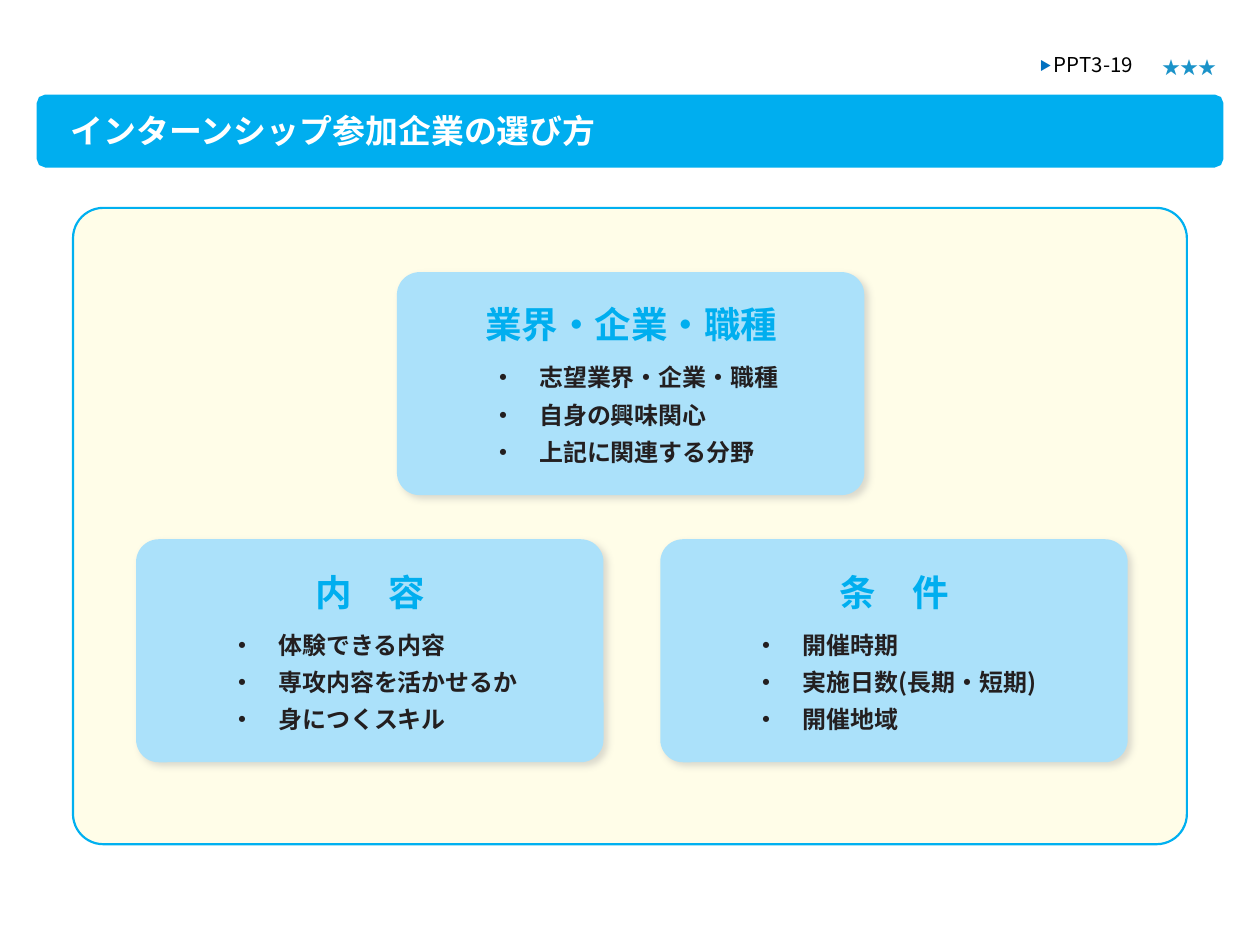
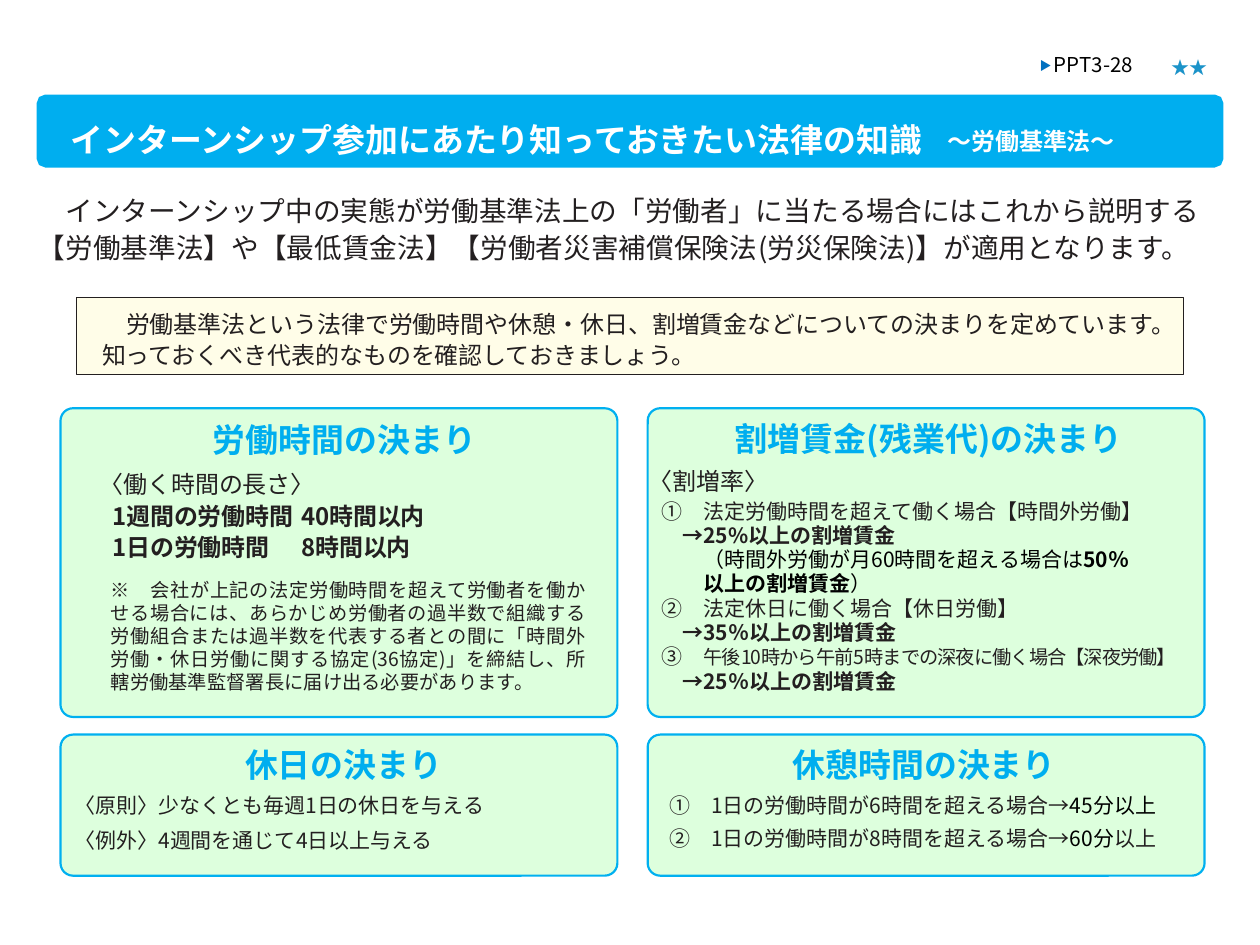
from dataclasses import dataclass, field, replace

from lxml import etree
from pptx import Presentation
from pptx import util as u
from pptx.dml.color import RGBColor
from pptx.enum import shapes, text
from pptx.oxml import ns

CENTER = text.PP_ALIGN.CENTER
JUSTIFY = text.PP_ALIGN.JUSTIFY


@dataclass(frozen=True)
class Style:
    size: float
    color: str
    bold: bool = False
    baseline: int = 0
    spacing: int = 0


@dataclass(frozen=True)
class Theme:
    font: str = "Noto Sans CJK JP"
    band: str = "00AEEF"
    outline: str = "00B0F0"
    cream: str = "FFFDE8"
    sky: str = "ABE1FA"
    mint: str = "DDFFDD"
    ink: str = "231F20"
    shadow: str = "A6A6A6"
    title: Style = Style(18.8, "FFFFFF", True)
    subtitle: Style = Style(23.7, "FFFFFF", True, baseline=5000)
    marker: Style = Style(11.7, "0070C0", baseline=9000)
    number: Style = Style(11.7, "000000")
    stars: Style = Style(10.3, "1B93C9")
    card_heading: Style = Style(20.9, "00AEEF", True)
    heading: Style = Style(18.8, "00AEEF", True)
    lead: Style = Style(15.8, "231F20")
    body: Style = Style(13.7, "231F20")
    strong: Style = Style(13.7, "231F20", True)
    detail: Style = Style(12, "231F20")
    remark: Style = Style(11, "231F20")


THEME = Theme()


@dataclass
class Line:
    """One paragraph: runs are (text, style) pairs, lengths in inches, spacing in points."""
    runs: list
    left: float = 0
    first: float = 0
    before: float = 0
    spacing: float = None
    align: int = None
    tabs: list = field(default_factory=list)


class Deck:
    def __init__(self, theme):
        self.theme = theme
        self.presentation = Presentation()
        self.presentation.slide_width = u.Inches(10)
        self.presentation.slide_height = u.Inches(7.5)
        self.slide = None

    def add_slide(self, number, stars, title_runs):
        """Start a slide with the shared band, title, number and star rating."""
        self.slide = self.presentation.slides.add_slide(self.presentation.slide_layouts[6])
        self.band(0.29, 0.75, 9.42, 0.58)
        self.text(0.55, 0.86, 9.17, 0.33, [Line(title_runs, left=0.01, before=1.1)], top=0.02)
        self.text(8.24, 0.4, 0.99, 0.21,
                  [Line([("▶ ", self.theme.marker), (number, self.theme.number)],
                        left=0.01, before=1)], top=0.01)
        self.text(9.23, 0.4, 0.43, 0.27,
                  [Line([("★" * stars, self.theme.stars)], align=CENTER)],
                  top=0.05, wrap=False)

    def paint(self, shape, fill, line=None, width=1.25):
        shape.shadow.inherit = False
        shape.fill.solid()
        shape.fill.fore_color.rgb = RGBColor.from_string(fill)
        if line:
            shape.line.color.rgb = RGBColor.from_string(line)
            shape.line.width = u.Pt(width)
        else:
            shape.line.fill.background()
        return shape

    def band(self, left, top, width, height):
        corner = [(0.16, 0), (0.07, 0), (0.02, 0.02), (0, 0.07), (0, 0.16)]
        left_side = corner + [(x, height - y) for x, y in reversed(corner)]
        outline = left_side + [(width - x, y) for x, y in reversed(left_side)]
        points = [(u.Inches(left + x), u.Inches(top + y)) for x, y in outline]
        builder = self.slide.shapes.build_freeform(*points[0])
        builder.add_line_segments(points[1:], close=True)
        self.paint(builder.convert_to_shape(), self.theme.band)

    def box(self, left, top, width, height, fill, line=None, radius=0, line_width=1.25):
        kind = shapes.MSO_SHAPE.ROUNDED_RECTANGLE if radius else shapes.MSO_SHAPE.RECTANGLE
        shape = self.slide.shapes.add_shape(
            kind, u.Inches(left), u.Inches(top), u.Inches(width), u.Inches(height))
        if radius:
            shape.adjustments[0] = radius / min(width, height)
        return self.paint(shape, fill, line, line_width)

    def drop_shadow(self, shape):
        effects = shape._element.spPr.find(ns.qn("a:effectLst"))
        shadow = etree.SubElement(effects, ns.qn("a:outerShdw"), blurRad=str(u.Pt(4)),
                                  dist=str(u.Pt(3)), dir="2700000", algn="tl", rotWithShape="0")
        color = etree.SubElement(shadow, ns.qn("a:srgbClr"), val=self.theme.shadow)
        etree.SubElement(color, ns.qn("a:alpha"), val="40000")

    def text(self, left, top_edge, width, height, lines, top=0.08, wrap=True):
        shape = self.slide.shapes.add_textbox(
            u.Inches(left), u.Inches(top_edge), u.Inches(width), u.Inches(height))
        self.fill_text(shape, lines, top, wrap=wrap)

    def fill_text(self, shape, lines, top=0, bottom=0, wrap=True):
        frame = shape.text_frame
        frame.word_wrap = wrap
        frame.auto_size = text.MSO_AUTO_SIZE.SHAPE_TO_FIT_TEXT
        frame.vertical_anchor = text.MSO_ANCHOR.TOP
        frame.margin_left = frame.margin_right = 0
        frame.margin_top, frame.margin_bottom = u.Inches(top), u.Inches(bottom)
        for index, line in enumerate(lines):
            paragraph = frame.add_paragraph() if index else frame.paragraphs[0]
            self.fill_paragraph(paragraph, line)

    def fill_paragraph(self, paragraph, line):
        paragraph.alignment = line.align or text.PP_ALIGN.LEFT
        paragraph.space_before = u.Pt(line.before)
        if line.spacing:
            paragraph.line_spacing = line.spacing
        properties = paragraph._p.get_or_add_pPr()
        properties.set("marL", str(u.Inches(line.left)))
        properties.set("indent", str(u.Inches(line.first)))
        if line.tabs:
            tab_list = etree.SubElement(properties, ns.qn("a:tabLst"))
            for position in line.tabs:
                etree.SubElement(tab_list, ns.qn("a:tab"), pos=str(u.Inches(position)), algn="r")
        for content, style in line.runs:
            self.add_run(paragraph, content, style)

    def add_run(self, paragraph, content, style):
        run = paragraph.add_run()
        run.text = content
        run.font.size = u.Pt(style.size)
        run.font.bold = style.bold
        run.font.name = self.theme.font
        run.font.color.rgb = RGBColor.from_string(style.color)
        properties = run._r.get_or_add_rPr()
        etree.SubElement(properties, ns.qn("a:ea"), typeface=self.theme.font)
        if style.baseline:
            properties.set("baseline", str(style.baseline))
        if style.spacing:
            properties.set("spc", str(style.spacing))

    def card(self, left, top, heading, items):
        self.drop_shadow(self.box(left, top, 3.71, 1.77, self.theme.sky, radius=0.18))
        lines = [Line([(heading, self.theme.card_heading)], align=CENTER, before=15.7)]
        for index, item in enumerate(items):
            lines.append(Line([("・　" + item, self.theme.strong)],
                              left=0.78, before=4.8 if index else 9.6))
        self.text(left - 0.03, top + 0.02, 3.78, 1.54, lines, top=0.22)


def build_choosing_slide(deck):
    theme = deck.theme
    deck.add_slide("PPT3-19", 3, [("インターンシップ参加企業の選び方", theme.title)])
    deck.box(0.58, 1.65, 8.84, 5.05, theme.cream, theme.outline, radius=0.24)
    # Three criteria cards
    deck.card(3.15, 2.16, "業界・企業・職種",
              ["志望業界・企業・職種", "自身の興味関心", "上記に関連する分野"])
    deck.card(1.08, 4.28, "内　容",
              ["体験できる内容", "専攻内容を活かせるか", "身につくスキル"])
    deck.card(5.24, 4.28, "条　件",
              ["開催時期", "実施日数(長期・短期)", "開催地域"])


def build_law_slide(deck):
    theme = deck.theme
    detail = theme.detail
    detail_bold = replace(detail, bold=True)
    black = replace(detail, color="000000")
    black_bold = replace(black, bold=True)
    tight = replace(theme.remark, spacing=-60)

    deck.add_slide("PPT3-28", 2, [
        ("インターンシップ参加にあたり知っておきたい法律の知識", theme.title),
        ("　～労働基準法～", theme.subtitle)])

    # Introduction and note
    deck.text(0.29, 1.5, 9.36, 0.57, [Line([(
        "インターンシップ中の実態が労働基準法上の「労働者」に当たる場合にはこれから説明する"
        "【労働基準法】や【最低賃金法】【労働者災害補償保険法(労災保険法)】が適用となります。",
        theme.lead)], left=0.01, first=0.22, before=0.8, spacing=1.12)], top=0.01)
    note = deck.box(0.61, 2.36, 8.78, 0.61, theme.cream, theme.ink, line_width=0.5)
    deck.fill_text(note, [Line([(
        "労働基準法という法律で労働時間や休憩・休日、割増賃金などについての決まりを定めています。"
        "知っておくべき代表的なものを確認しておきましょう。",
        theme.body)], left=0.2, first=0.19, before=4, spacing=1.1)], top=0.07, bottom=0.07)

    # Two by two panels
    for left in (0.48, 5.14):
        for top, height in ((3.24, 2.45), (5.83, 1.12)):
            deck.box(left, top, 4.42, height, theme.mint, theme.outline, radius=0.1)

    # Working hours
    limits = [("1週間の労働時間", "40時間以内"), ("1日の労働時間", "8時間以内")]
    deck.text(0.78, 3.25, 3.87, 1.23, [
        Line([("労働時間の決まり", theme.heading)], left=0.91, before=1.1),
        Line([("〈働く時間の長さ〉", theme.body)], left=0.01, before=6),
        *(Line([(f"{period}\t{limit}", theme.strong)], left=0.11, before=1.6, tabs=[2.85])
          for period, limit in limits)])
    deck.text(0.87, 4.58, 3.78, 0.94, [Line([(
        "※　会社が上記の法定労働時間を超えて労働者を働かせる場合には、あらかじめ労働者の過半数で"
        "組織する労働組合または過半数を代表する者との間に「時間外労働・休日労働に関する協定"
        "(36協定)」を締結し、所轄労働基準監督署長に届け出る必要があります。",
        theme.remark)], left=0.01, align=JUSTIFY)], top=0.01)

    # Premium pay: (indent level, runs), one level being one character wide
    rates = [
        (0, [("①　法定労働時間を超えて働く場合【時間外労働】", detail)]),
        (1, [("→25%以上の割増賃金", detail_bold)]),
        (2, [("（時間外労働が月60時間を超える場合は", black), ("50％", black_bold)]),
        (2, [("以上の割増賃金", black_bold), ("）", black)]),
        (0, [("②　法定休日に働く場合【休日労働】", detail)]),
        (1, [("→35％以上の割増賃金", detail_bold)]),
        (0, [("③　", detail), ("午後10時から午前5時までの深夜に働く場合【深夜労働】", tight)]),
        (1, [("→25％以上の割増賃金", detail_bold)])]
    lines = [Line([("割増賃金(残業代)の決まり", theme.heading)],
                  left=0.08, before=7.7, align=CENTER),
             Line([("〈割増率〉", theme.body)], left=0.01, before=4.9)]
    for index, (level, runs) in enumerate(rates):
        is_edge = index in (0, len(rates) - 1)
        lines.append(Line(runs, left=0.11 + level / 6, before=0 if index else 2,
                          spacing=u.Pt(14.3 if is_edge else 13.8)))
    deck.text(5.14, 3.24, 4.38, 2.3, lines)

    # Days off
    deck.text(0.59, 5.83, 4.28, 0.94, [
        Line([("休日の決まり", theme.heading)], before=9.3, align=CENTER),
        Line([("〈原則〉少なくとも毎週1日の休日を与える", detail)], before=5.1),
        Line([("〈例外〉4週間を通じて4日以上与える", detail)], before=5.1)])

    # Breaks
    deck.text(5.14, 5.83, 4.39, 0.93, [
        Line([("休憩時間の決まり", theme.heading)], before=9.3, align=CENTER),
        Line([("①　1日の労働時間が6時間を超える場合→", detail), ("45分以上", black)],
             left=0.17, before=5.1),
        Line([("②　1日の労働時間が8時間を超える場合→", detail), ("60分", black),
              ("以上", detail)], left=0.17, before=4.1)])


def main():
    deck = Deck(THEME)
    build_choosing_slide(deck)
    build_law_slide(deck)
    deck.presentation.save("out.pptx")


if __name__ == "__main__":
    main()
